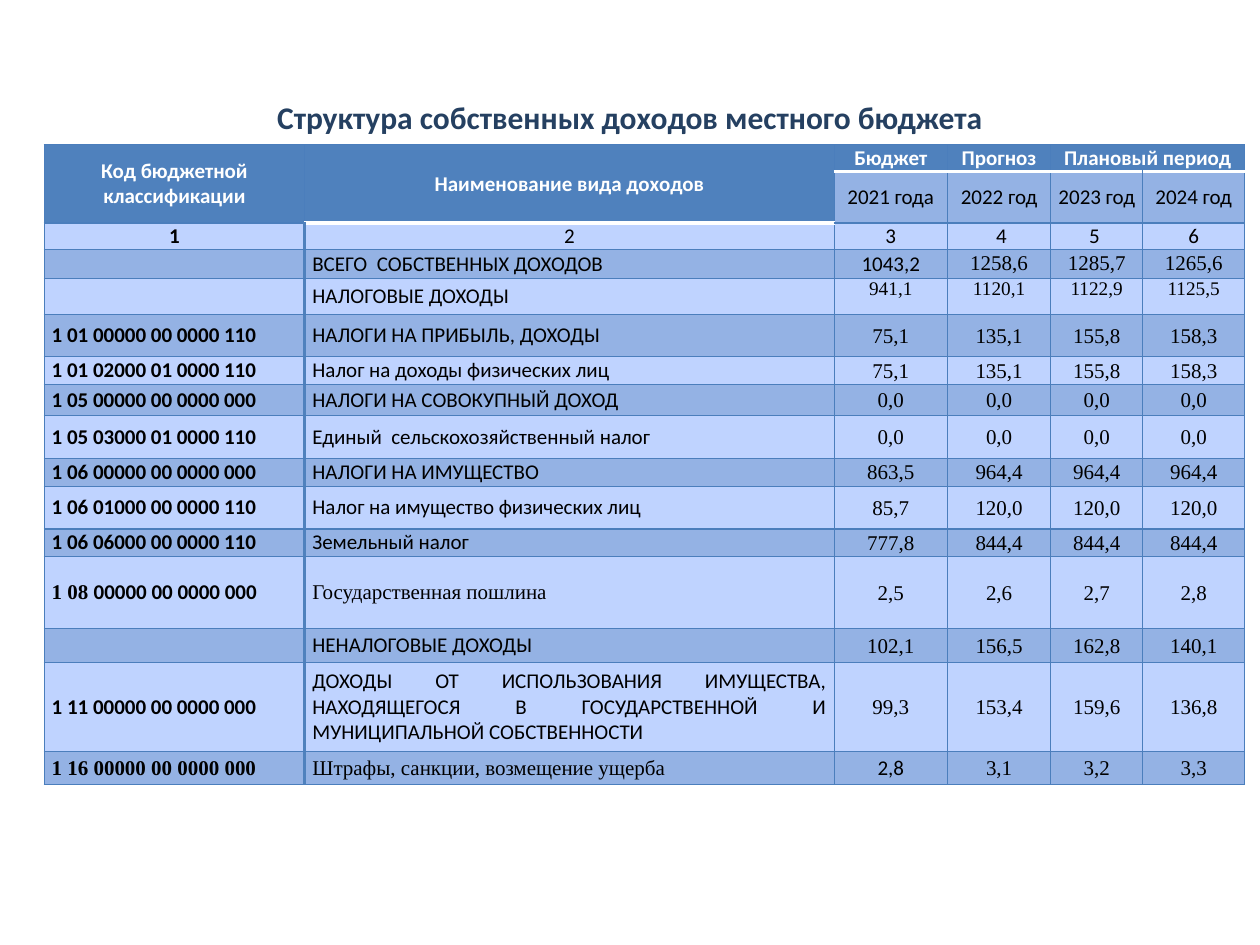
from typing import NamedTuple

from lxml import etree
from pptx import Presentation
from pptx.dml.color import RGBColor
from pptx.enum import text
from pptx.oxml.ns import qn
from pptx.util import Inches, Pt

NAVY = RGBColor(0x25, 0x40, 0x61)
BLUE = RGBColor(0x4F, 0x81, 0xBD)
EDGE = RGBColor(0x4B, 0x7E, 0xBC)
DARK = RGBColor(0x94, 0xB2, 0xE4)
PALE = RGBColor(0xBF, 0xD3, 0xFF)
WHITE = RGBColor(0xFF, 0xFF, 0xFF)
BLACK = RGBColor(0, 0, 0)

SANS, SERIF = "Calibri", "Times New Roman"
MID, LOW, TOP = text.MSO_ANCHOR.MIDDLE, text.MSO_ANCHOR.BOTTOM, text.MSO_ANCHOR.TOP
CENTER, FULL = text.PP_ALIGN.CENTER, text.PP_ALIGN.JUSTIFY


class Look(NamedTuple):
    """Text and padding of one cell."""
    font: str = SANS
    size: float = 12
    color: RGBColor = BLACK
    bold: bool = False
    align: text.PP_ALIGN = CENTER
    anchor: text.MSO_ANCHOR = MID
    side: float = 0.06
    top: float = 0


class Row(NamedTuple):
    """One line of income."""
    high: float
    code: str
    name: str
    sums: str
    serif: int = 0           # leading code letters set in serif
    name_font: str = SANS
    first_font: str = SERIF  # font of the first sum
    look: Look = Look(SERIF, side=0.01, top=0.01)


HEAD = Look(color=WHITE, bold=True)
WIDE = Look(SERIF)
COLS = [2.07, 4.2, 0.9, 0.82, 0.73, 0.81]
HEAD_ROWS = [0.21, 0.41, 0.21]
YEARS = ["2021 года", "2022 год", "2023 год", "2024 год"]
MARKS = ["1", "2", "3", " 4", "5 ", "6"]
ROWS = [
    Row(0.23, "", "ВСЕГО  СОБСТВЕННЫХ ДОХОДОВ", "1043,2 1258,6 1285,7 1265,6",
        first_font=SANS, look=WIDE),
    Row(0.29, "", "НАЛОГОВЫЕ ДОХОДЫ", "941,1 1120,1 1122,9 1125,5",
        look=Look(SERIF, 11, anchor=TOP, side=0.07)),
    Row(0.33, "1 01 00000 00 0000 110", "НАЛОГИ НА ПРИБЫЛЬ, ДОХОДЫ", "75,1 135,1 155,8 158,3"),
    Row(0.22, "1 01 02000 01 0000 110", "Налог на доходы физических лиц",
        "75,1 135,1 155,8 158,3"),
    Row(0.25, "1 05 00000 00 0000 000", "НАЛОГИ НА СОВОКУПНЫЙ ДОХОД", "0,0 0,0 0,0 0,0"),
    Row(0.34, "1 05 03000 01 0000 110", "Единый  сельскохозяйственный налог",
        "0,0 0,0 0,0 0,0"),
    Row(0.22, "1 06 00000 00 0000 000", "НАЛОГИ НА ИМУЩЕСТВО", "863,5 964,4 964,4 964,4"),
    Row(0.34, "1 06 01000 00 0000 110", "Налог на имущество физических лиц",
        "85,7 120,0 120,0 120,0"),
    Row(0.22, "1 06 06000 00 0000 110", "Земельный налог", "777,8 844,4 844,4 844,4"),
    Row(0.57, "1 08 00000 00 0000 000", "Государственная пошлина", "2,5 2,6 2,7 2,8",
        serif=5, name_font=SERIF),
    Row(0.27, "", "НЕНАЛОГОВЫЕ ДОХОДЫ", "102,1 156,5 162,8 140,1"),
    Row(0.71, "1 11 00000 00 0000 000",
        "ДОХОДЫ ОТ ИСПОЛЬЗОВАНИЯ ИМУЩЕСТВА, НАХОДЯЩЕГОСЯ В ГОСУДАРСТВЕННОЙ И "
        "МУНИЦИПАЛЬНОЙ СОБСТВЕННОСТИ", "99,3 153,4 159,6 136,8"),
    Row(0.26, "1 16 00000 00 0000 000", "Штрафы, санкции, возмещение ущерба",
        "2,8 3,1 3,2 3,3", serif=22, name_font=SERIF, first_font=SANS, look=WIDE),
]


def style(run, look: Look) -> None:
    font = run.font
    font.name, font.size, font.bold = look.font, Pt(look.size), look.bold
    font.color.rgb = look.color


def write(cell, words: str, look: Look, serif: int = 0) -> None:
    cell.vertical_anchor = look.anchor
    cell.margin_left = cell.margin_right = Inches(look.side)
    cell.margin_top, cell.margin_bottom = Inches(look.top), 0
    para = cell.text_frame.paragraphs[0]
    para.alignment = look.align
    parts = [(words[:serif], SERIF), (words[serif:], look.font)]
    for part, font in parts:
        if part:
            run = para.add_run()
            run.text = part
            style(run, look._replace(font=font))
    if not words:  # keeps an empty cell from growing its row
        etree.SubElement(para._p, qn("a:endParaRPr"), sz=str(int(look.size * 100)))


def line(cell, side: str, color: RGBColor, width: float) -> None:
    props = cell._tc.get_or_add_tcPr()
    edge = etree.SubElement(props, qn("a:ln" + side), w=str(Pt(width)))
    fill = etree.SubElement(edge, qn("a:solidFill"))
    etree.SubElement(fill, qn("a:srgbClr"), val=str(color))


def paint(cell, r: int, c: int) -> None:
    """Borders first, then the fill, as the schema orders them."""
    thick, white = (BLUE, 2), (WHITE, 2)
    edges = dict.fromkeys("LRTB", (EDGE, 0.75))
    if r >= 2 and c < 2:
        edges["R" if c == 0 else "L"] = thick
    if (r == 0 and c > 0) or (r, c) == (1, 1):
        edges["B"] = white
    if (r == 1 and c > 1) or (r, c) == (2, 1):
        edges["T"] = white
    for side, (color, width) in edges.items():
        line(cell, side, color, width)
    cell.fill.solid()
    head = r == 0 or (r == 1 and c < 2)
    cell.fill.fore_color.rgb = BLUE if head else DARK if r % 2 else PALE


def main() -> None:
    deck = Presentation()
    deck.slide_width, deck.slide_height = Inches(10), Inches(7.5)
    slide = deck.slides.add_slide(deck.slide_layouts[5])

    # Title
    title = slide.shapes.title
    title.left, title.top = Inches(0.5), Inches(0.3)
    title.width, title.height = Inches(9), Inches(1.25)
    frame = title.text_frame
    frame.text = "Структура собственных доходов местного бюджета"
    frame.vertical_anchor = MID
    frame.paragraphs[0].alignment = CENTER
    style(frame.paragraphs[0].runs[0], Look(size=18, color=NAVY, bold=True))

    # Table grid
    highs = HEAD_ROWS + [row.high for row in ROWS]
    table = slide.shapes.add_table(
        len(highs), len(COLS), Inches(0.35), Inches(1.15),
        Inches(sum(COLS)), Inches(sum(highs))).table
    for col, width in zip(table.columns, COLS):
        col.width = Inches(width)
    for r, high in enumerate(highs):
        table.rows[r].height = Inches(high)
        for c in range(len(COLS)):
            paint(table.cell(r, c), r, c)

    # Heading rows
    for c in (0, 1):
        table.cell(0, c).merge(table.cell(1, c))
    table.cell(0, 4).merge(table.cell(0, 5))
    heads = ["Код бюджетной классификации", "Наименование вида доходов",
             "Бюджет", "Прогноз", "Плановый период"]
    for c, words in enumerate(heads):
        write(table.cell(0, c), words, HEAD._replace(anchor=LOW if c > 2 else MID))
    for c, words in enumerate(YEARS, 2):
        write(table.cell(1, c), words, Look())
    for c, words in enumerate(MARKS):
        write(table.cell(2, c), words, Look(bold=c == 0, anchor=LOW))

    # Income rows
    for r, row in enumerate(ROWS, len(HEAD_ROWS)):
        write(table.cell(r, 0), row.code, Look(bold=True, align=FULL), row.serif)
        write(table.cell(r, 1), row.name, Look(row.name_font, align=FULL))
        for c, words in enumerate(row.sums.split(), 2):
            font = row.first_font if c == 2 else SERIF
            write(table.cell(r, c), words, row.look._replace(font=font))

    deck.save("out.pptx")


if __name__ == "__main__":
    main()
